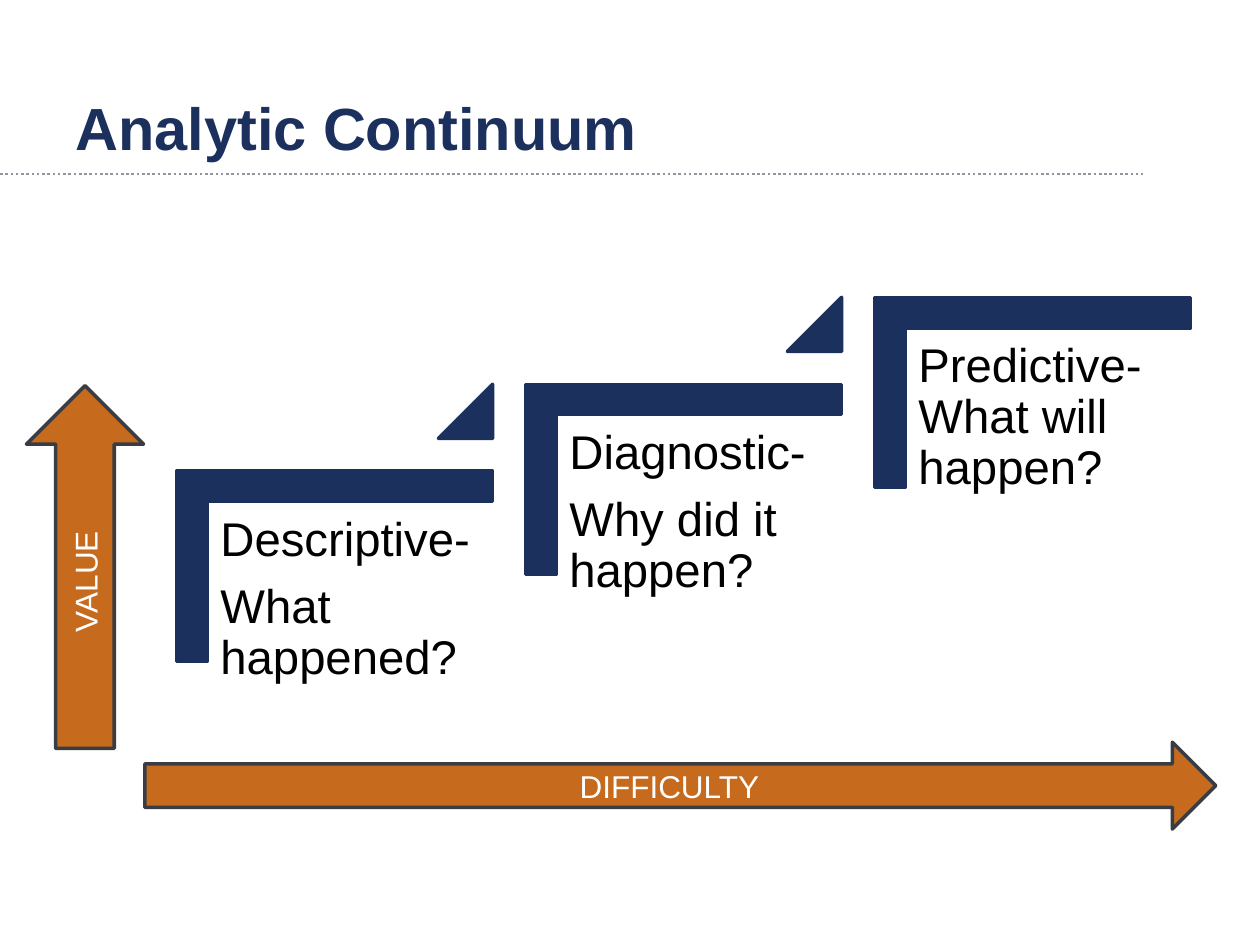
from lxml.etree import SubElement
from pptx import Presentation
from pptx.dml.color import RGBColor
from pptx.enum.dml import MSO_LINE
from pptx.enum.shapes import MSO_CONNECTOR, MSO_SHAPE as SHAPE
from pptx.enum.text import MSO_ANCHOR as ANCHOR, PP_ALIGN as ALIGN
from pptx.oxml.ns import qn
from pptx.util import Inches, Pt

COLORS = {"navy": "1C305D", "orange": "C66A1D", "outline": "393D43",
          "rule": "9096A0", "black": "000000", "white": "FFFFFF"}
STEPS = [["Descriptive-", "What happened?"],
         ["Diagnostic-", "Why did it happen?"],
         ["Predictive-What will happen?"]]
STEP_X, STEP_Y = 2.77, -0.69
CORNER_ADJUST = 0.16


def color(name):
    return RGBColor.from_string(COLORS[name])


def inches(*lengths):
    return [Inches(length) for length in lengths]


def write(frame, lines, size, ink, bold=False, align=ALIGN.LEFT,
          anchor=ANCHOR.TOP, spacing=1.0, after=0, inset=None):
    """Fill a text frame with one paragraph per line."""
    frame.word_wrap = True
    frame.vertical_anchor = anchor
    if inset is not None:
        frame.margin_left = frame.margin_right = Inches(inset)
        frame.margin_top = frame.margin_bottom = Inches(inset)
    for index, line in enumerate(lines):
        para = frame.add_paragraph() if index else frame.paragraphs[0]
        para.alignment = align
        para.line_spacing = spacing
        para.space_before = Pt(0)
        para.space_after = Pt(after)
        span = para.add_run()
        span.text = line
        span.font.name = "Arial"
        span.font.size = Pt(size)
        span.font.bold = bold
        span.font.color.rgb = color(ink)


def add_solid(page, kind, box, fill, line, adjustments=()):
    shape = page.shapes.add_shape(kind, *inches(*box))
    shape.shadow.inherit = False
    shape.fill.solid()
    shape.fill.fore_color.rgb = color(fill)
    shape.line.color.rgb = color(line)
    shape.line.width = Pt(2)
    for index, value in enumerate(adjustments):
        shape.adjustments[index] = value
    return shape


def add_title(page, text):
    title = page.shapes.title
    title.left, title.top, title.width, title.height = inches(0.5, 0.09, 9, 1.25)
    write(title.text_frame, [text], 34, "navy", bold=True, anchor=ANCHOR.BOTTOM)


def add_rule(page):
    rule = page.shapes.add_connector(MSO_CONNECTOR.STRAIGHT,
                                     *inches(0, 1.38, 9.07, 1.38))
    rule.line.color.rgb = color("rule")
    rule.line.width = Pt(1.5)
    rule.line.dash_style = MSO_LINE.ROUND_DOT
    SubElement(rule.element.spPr, qn("a:effectLst"))


def add_step(page, index, lines):
    """Add a bracket with its text, and a triangle leading to the next step."""
    dx, dy = index * STEP_X, index * STEP_Y
    bracket = add_solid(page, SHAPE.CORNER, (1.9 + dx, 3.24 + dy, 1.51, 2.51),
                        "navy", "navy", (CORNER_ADJUST, CORNER_ADJUST))
    bracket.rotation = 90
    box = page.shapes.add_textbox(*inches(1.64 + dx, 3.98 + dy, 2.26, 1.98))
    write(box.text_frame, lines, 27, "black", spacing=0.9, after=9.45, inset=0.11)
    if index < len(STEPS) - 1:
        add_solid(page, SHAPE.ISOSCELES_TRIANGLE,
                  (3.48 + dx, 3.05 + dy, 0.43, 0.43), "navy", "navy", (1,))


def add_axis(page, kind, box, label, upward=False):
    arrow = add_solid(page, kind, box, "orange", "outline")
    write(arrow.text_frame, [label], 18, "white", align=ALIGN.CENTER,
          anchor=ANCHOR.MIDDLE)
    if upward:
        arrow.element.txBody.find(qn("a:bodyPr")).set("vert", "vert270")


def main():
    deck = Presentation()
    deck.slide_width, deck.slide_height = inches(10, 7.5)
    page = deck.slides.add_slide(deck.slide_layouts.get_by_name("Title Only"))
    add_rule(page)
    add_title(page, "Analytic Continuum")
    for index, lines in enumerate(STEPS):
        add_step(page, index, lines)
    add_axis(page, SHAPE.UP_ARROW, (0.21, 3.06, 0.93, 2.88), "VALUE", upward=True)
    add_axis(page, SHAPE.RIGHT_ARROW, (1.15, 5.89, 8.5, 0.69), "DIFFICULTY")
    deck.save("out.pptx")


if __name__ == "__main__":
    main()
